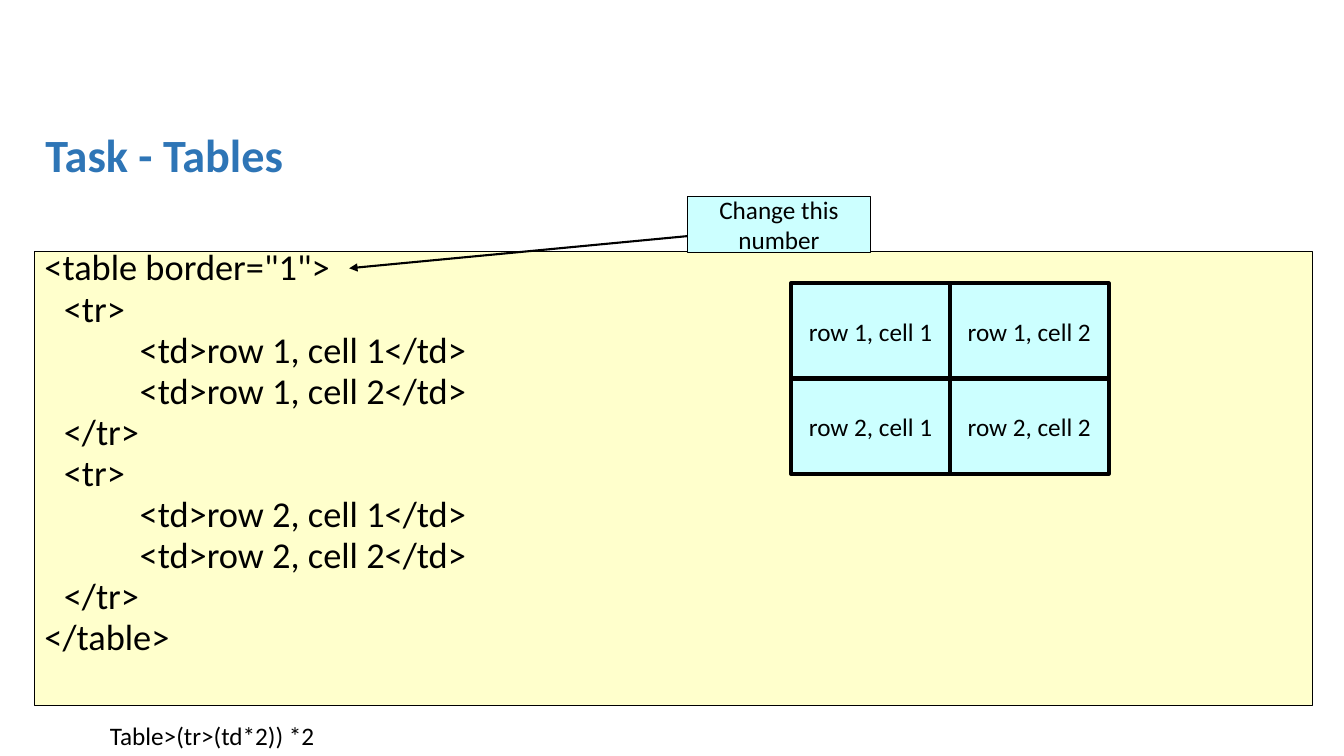
from dataclasses import dataclass

from lxml import etree
from pptx import Presentation
from pptx.dml.color import RGBColor
from pptx.enum.shapes import MSO_CONNECTOR, MSO_SHAPE
from pptx.enum.text import MSO_ANCHOR, PP_ALIGN
from pptx.oxml.ns import qn
from pptx.util import Cm, Pt

RECT = MSO_SHAPE.RECTANGLE
LINE = MSO_CONNECTOR.STRAIGHT
TOP, MIDDLE = MSO_ANCHOR.TOP, MSO_ANCHOR.MIDDLE
LEFT, CENTER = PP_ALIGN.LEFT, PP_ALIGN.CENTER

COLORS = {"ink": "000000", "title": "2E75B6", "code": "FFFFCC", "cell": "CCFFFF"}
INDENTS = (0, 0.49, 2.4)
CODE = (
    (0, '<table border="1">'),
    (1, "<tr>"),
    (2, "<td>row 1, cell 1</td>"),
    (2, "<td>row 1, cell 2</td>"),
    (1, "</tr>"),
    (1, "<tr>"),
    (2, "<td>row 2, cell 1</td>"),
    (2, "<td>row 2, cell 2</td>"),
    (1, "</tr>"),
    (0, "</table>"),
)
CELL_W, CELL_H = 4, 2.4


@dataclass
class Panel:
    left: float
    top: float
    width: float
    height: float
    fill: str = "cell"
    anchor: MSO_ANCHOR = MIDDLE
    line: float = 0.75
    wrap: bool = True


def color(name: str) -> RGBColor:
    return RGBColor.from_string(COLORS[name])


def write(para, text: str, size: float, align=LEFT, ink: str = "ink",
          bold: bool = False) -> None:
    para.text = text
    para.alignment = align
    para.font.color.rgb = color(ink)
    style = {"name": "Calibri", "size": Pt(size), "bold": bold}
    for key, value in style.items():
        setattr(para.font, key, value)


def add_panel(slide, panel: Panel):
    """Draw an outlined box and return its text frame."""
    shape = slide.shapes.add_shape(
        RECT, Cm(panel.left), Cm(panel.top), Cm(panel.width), Cm(panel.height))
    shape.shadow.inherit = False
    shape.fill.solid()
    shape.fill.fore_color.rgb = color(panel.fill)
    shape.line.color.rgb = color("ink")
    shape.line.width = Pt(panel.line)
    frame = shape.text_frame
    frame.word_wrap = panel.wrap
    frame.vertical_anchor = panel.anchor
    return frame


def add_title(slide) -> None:
    title = slide.shapes.title
    place = {"left": 0.89, "top": 2.72, "width": 32.21, "height": 2.51}
    for key, value in place.items():
        setattr(title, key, Cm(value))
    title.text_frame.vertical_anchor = MIDDLE
    para = title.text_frame.paragraphs[0]
    write(para, "Task - Tables", 33, ink="title", bold=True)
    para.line_spacing = 0.9


def add_code(slide) -> None:
    frame = add_panel(slide, Panel(0.87, 6.34, 32.21, 11.45, "code", TOP))
    for row, (level, text) in enumerate(CODE):
        para = frame.add_paragraph() if row else frame.paragraphs[0]
        para._p.get_or_add_pPr().set("marL", str(Cm(INDENTS[level])))
        write(para, text, 26)
        para.line_spacing = 0.7
        if row:
            para.space_before = Pt(7.5)


def add_grid(slide) -> None:
    for row in range(2):
        for col in range(2):
            cell = Panel(19.94 + col * CELL_W, 7.14 + row * CELL_H,
                         CELL_W, CELL_H, line=3, wrap=False)
            para = add_panel(slide, cell).paragraphs[0]
            write(para, f"row {row + 1}, cell {col + 1}", 18, CENTER)


def add_note(slide) -> None:
    frame = add_panel(slide, Panel(17.32, 4.95, 4.62, 1.42))
    write(frame.paragraphs[0], "Change this number", 18, CENTER)
    arrow = slide.shapes.add_connector(
        LINE, Cm(17.32), Cm(5.95), Cm(8.8), Cm(6.76))
    arrow.line.color.rgb = color("ink")
    arrow.line.width = Pt(1.5)
    etree.SubElement(arrow.line._get_or_add_ln(), qn("a:tailEnd"), type="triangle")
    etree.SubElement(arrow._element.spPr, qn("a:effectLst"))


def add_hint(slide) -> None:
    box = slide.shapes.add_textbox(Cm(2.52), Cm(18.03), Cm(5.74), Cm(1.02))
    box.text_frame.word_wrap = False
    write(box.text_frame.paragraphs[0], "Table>(tr>(td*2)) *2", 18)


def main() -> None:
    deck = Presentation()
    deck.slide_width, deck.slide_height = Cm(33.87), Cm(19.05)
    slide = deck.slides.add_slide(deck.slide_layouts[5])
    for draw in (add_title, add_code, add_grid, add_note, add_hint):
        draw(slide)
    deck.save("out.pptx")


if __name__ == "__main__":
    main()
